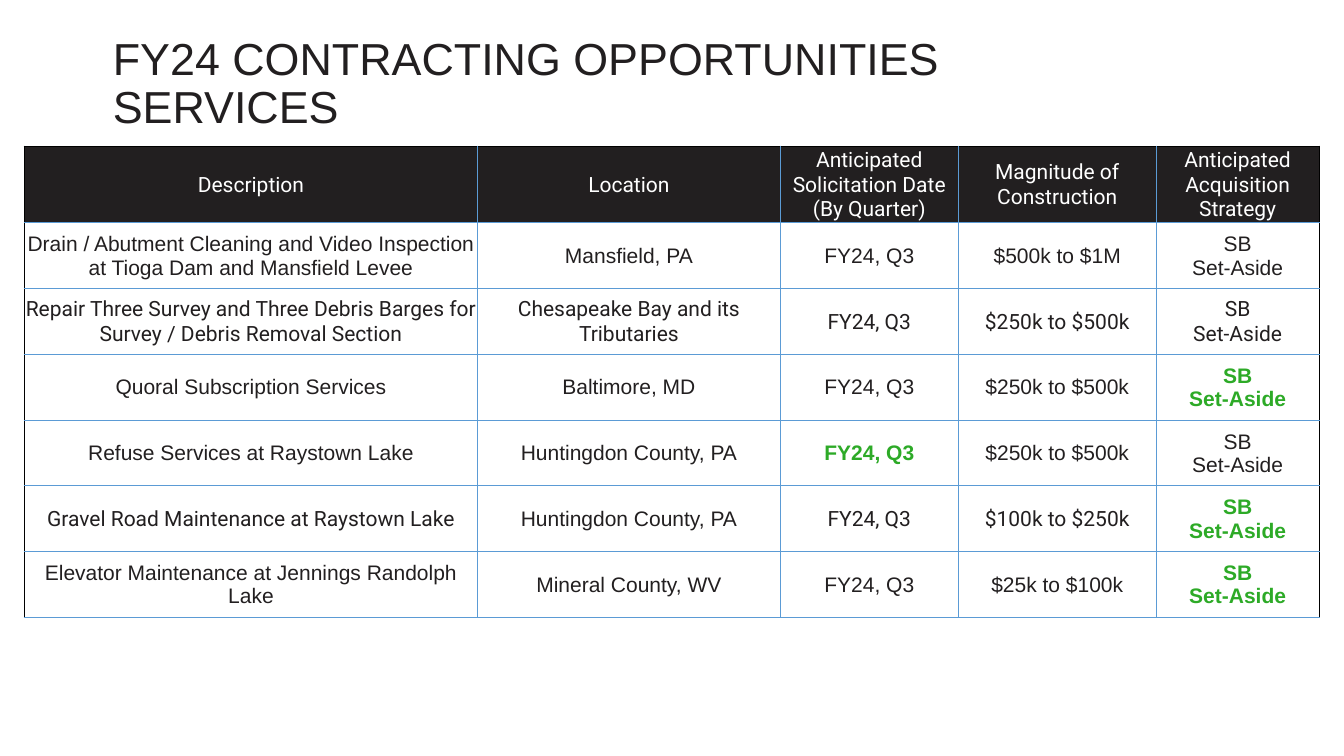
from lxml import etree
from pptx import Presentation, util as u
from pptx.dml.color import RGBColor
from pptx.enum import text as t
from pptx.oxml import ns

COLORS = {"ink": "221F20", "white": "FFFFFF", "green": "2DAA27",
          "blue": "5B9BD5", "black": "000000"}
WIDE, HIGH = u.Inches(13.33), u.Inches(7.5)

HEAD = ["Description", "Location", "Anticipated\nSolicitation Date\n(By Quarter)",
        "Magnitude of Construction", "Anticipated\nAcquisition Strategy"]
DATE, PLAN = "FY24, Q3", "SB\nSet-Aside"
# Each job: description, location, magnitude, fonts by column, changed column
A, R = "Arial", "Roboto"
JOBS = [
    ("Drain / Abutment Cleaning and Video Inspection at Tioga Dam and Mansfield Levee",
     "Mansfield, PA", "$500k to $1M", [A] * 5, None),
    ("Repair Three Survey and Three Debris Barges for Survey / Debris Removal Section",
     "Chesapeake Bay and its Tributaries", "$250k to $500k", [R] * 5, None),
    ("Quoral Subscription Services", "Baltimore, MD", "$250k to $500k", [A] * 5, 4),
    ("Refuse Services at Raystown Lake", "Huntingdon County, PA",
     "$250k to $500k", [A] * 5, 2),
    ("Gravel Road Maintenance at Raystown Lake", "Huntingdon County, PA",
     "$100k to $250k", [R, A, R, R, A], 4),
    ("Elevator Maintenance at Jennings Randolph Lake", "Mineral County, WV",
     "$25k to $100k", [A] * 5, 4),
]


def across(share):
    """Turn a percentage of the slide's width into a length."""
    return u.Emu(int(WIDE * share / 100))


def down(share):
    """Turn a percentage of the slide's height into a length."""
    return u.Emu(int(HIGH * share / 100))


def apply(item, values):
    for name, value in values.items():
        setattr(item, name, value)


class Board:
    """Hold the text style and the slide being filled."""

    frame = {"margin_left": 0, "margin_top": 0, "margin_right": 0,
             "margin_bottom": 0, "word_wrap": True}
    inset = {"margin_left": u.Inches(0.01), "margin_top": u.Inches(0.01),
             "margin_right": u.Inches(0.01), "margin_bottom": 0,
             "vertical_anchor": t.MSO_ANCHOR.MIDDLE}

    def __init__(self, deck):
        self.slide = deck.slides.add_slide(deck.slide_layouts[6])

    def label(self, frame, words, size, face, color, bold=False, **layout):
        for i, line in enumerate(words.split("\n")):
            para = frame.paragraphs[0] if i == 0 else frame.add_paragraph()
            apply(para, layout)
            run = para.add_run()
            run.text = line
            apply(run.font, {"size": u.Pt(size), "name": face, "bold": bold})
            run.font.color.rgb = RGBColor.from_string(COLORS[color])

    def title(self, words, left, top, width, height):
        box = self.slide.shapes.add_textbox(
            across(left), down(top), across(width), down(height))
        apply(box.text_frame, self.frame)
        self.label(box.text_frame, words, 32, A, "ink", line_spacing=0.9)

    def grid(self, left, top, widths, heights):
        shape = self.slide.shapes.add_table(
            len(heights), len(widths), across(left), down(top),
            across(sum(widths)), down(sum(heights)))
        table = shape.table
        apply(table, {"first_row": False, "horz_banding": False})
        for col, share in zip(table.columns, widths):
            col.width = across(share)
        for row, share in zip(table.rows, heights):
            row.height = down(share)
        return table

    def cell(self, cell, words, face, color, bold, outer, fill=None):
        apply(cell, self.inset)
        self.label(cell.text_frame, words, 15, face, color, bold,
                   alignment=t.PP_ALIGN.CENTER)
        for side in "LRTB":
            self.edge(cell, side, side in outer)
        if fill:
            cell.fill.solid()
            cell.fill.fore_color.rgb = RGBColor.from_string(COLORS[fill])
        else:
            cell.fill.background()

    def edge(self, cell, side, outer):
        width, color = (1, "black") if outer else (0.5, "blue")
        line = etree.SubElement(cell._tc.get_or_add_tcPr(), ns.qn("a:ln" + side),
                                w=str(u.Pt(width)))
        solid = etree.SubElement(line, ns.qn("a:solidFill"))
        etree.SubElement(solid, ns.qn("a:srgbClr"), val=COLORS[color])


def main():
    deck = Presentation()
    apply(deck, {"slide_width": WIDE, "slide_height": HIGH})
    board = Board(deck)
    board.title("FY24 CONTRACTING OPPORTUNITIES\nSERVICES", 8.4, 4.8, 88.6, 7.73)

    table = board.grid(1.8, 19.33, [33.75, 22.5, 13.27, 14.7, 12.15],
                       [8.27] + [8.7] * len(JOBS))
    last = len(HEAD) - 1
    ends = {0: "L", last: "R"}
    for c, words in enumerate(HEAD):
        board.cell(table.cell(0, c), words, R, "white", False,
                   "T" + ends.get(c, ""), "ink")
    for r, (job, place, cost, faces, fresh) in enumerate(JOBS, 1):
        for c, words in enumerate([job, place, DATE, cost, PLAN]):
            new = c == fresh
            board.cell(table.cell(r, c), words, faces[c],
                       "green" if new else "ink", new, ends.get(c, ""))
    deck.save("out.pptx")


if __name__ == "__main__":
    main()
